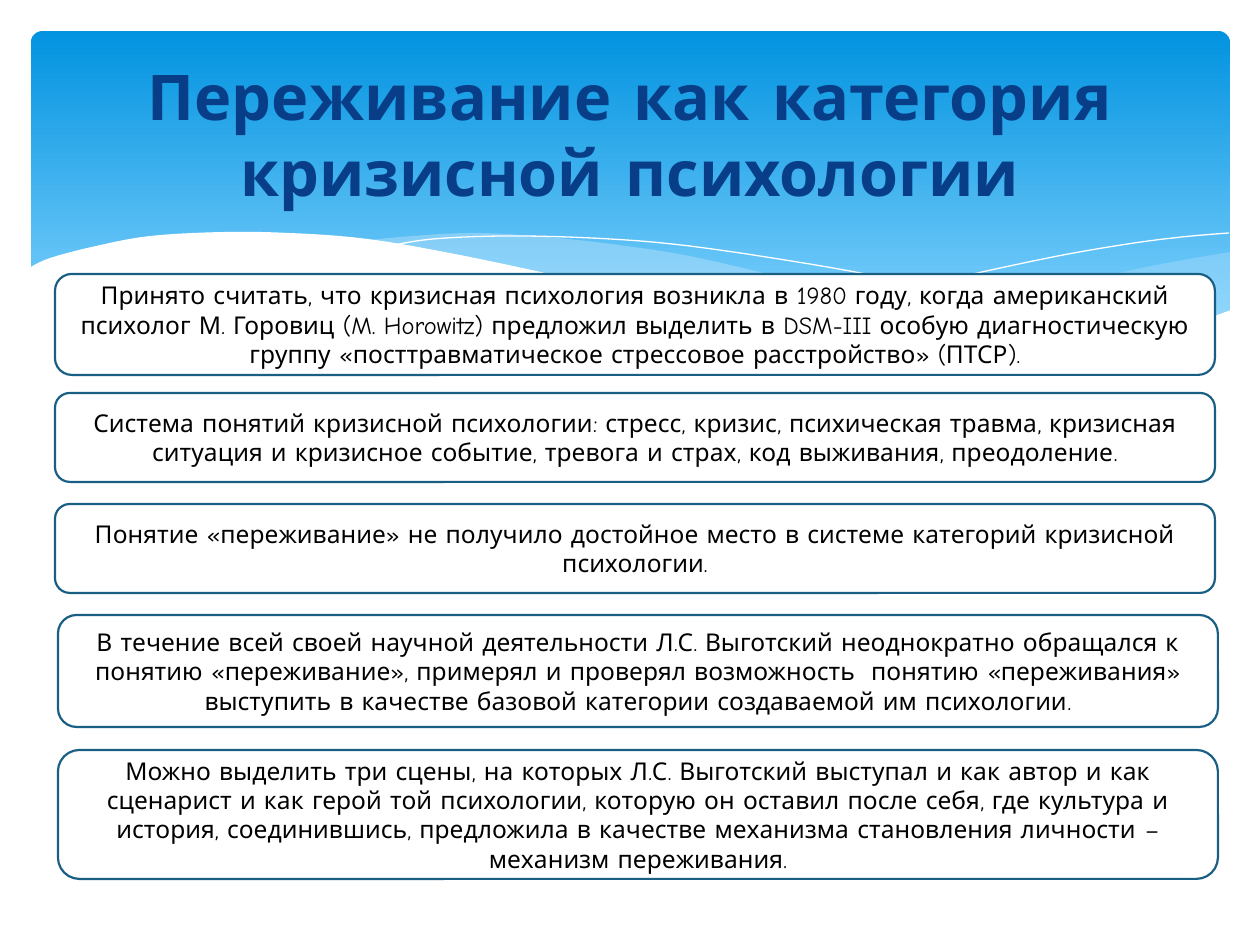
from dataclasses import dataclass
from lxml.etree import SubElement
from pptx import Presentation
from pptx.dml.color import RGBColor
from pptx.enum.shapes import MSO_SHAPE
from pptx.enum.text import MSO_ANCHOR, PP_ALIGN
from pptx.oxml.ns import qn
from pptx.util import Inches, Pt

SCALE = Inches(1) / 126


@dataclass(frozen=True)
class Theme:
    font: str = "Comic Neue"
    title: str = "073E87"
    text: str = "000000"
    white: str = "FFFFFF"
    border: str = "195F84"
    sky: str = "0293E0"
    haze: str = "83D3FE"
    wave: str = "C6E7FC"
    title_size: int = 36
    text_size: int = 14
    border_width: float = 1.25


THEME = Theme()

TITLE = "Переживание как категория кризисной психологии"

# left, top, height, text
CARDS = [
    (55, 274, 101, "Принято считать, что кризисная психология возникла в 1980 году, "
     "когда американский психолог М. Горовиц (M. Horowitz) предложил выделить в DSM-III "
     "особую диагностическую группу «посттравматическое стрессовое расстройство» (ПТСР)."),
    (55, 393, 89, "Система понятий кризисной психологии: стресс, кризис, психическая травма, "
     "кризисная ситуация и кризисное событие, тревога и страх, код выживания, преодоление."),
    (55, 504, 89, "Понятие «переживание» не получило достойное место в системе категорий "
     "кризисной психологии."),
    (58, 615, 112, "В течение всей своей научной деятельности Л.С. Выготский неоднократно "
     "обращался к понятию «переживание», примерял и проверял возможность  понятию "
     "«переживания» выступить в качестве базовой категории создаваемой им психологии."),
    (58, 750, 129, "Можно выделить три сцены, на которых Л.С. Выготский выступал и как автор "
     "и как сценарист и как герой той психологии, которую он оставил после себя, где культура "
     "и история, соединившись, предложила в качестве механизма становления личности – "
     "механизм переживания."),
]
CARD_WIDTH = 1160

RIGHT_TOP = [(1230, 252), (1178, 261), (1142, 268), (1085, 281), (982, 305),
             (919, 319), (833, 334)]
RIGHT_BASE = [(833, 334), (888, 341), (954, 348), (1026, 350), (1087, 347),
              (1140, 339), (1187, 326), (1230, 311)]
MID_TOP = [(360, 241), (413, 236), (479, 233), (557, 238), (633, 247), (699, 258),
           (793, 280), (890, 302), (977, 320), (1055, 334), (1125, 344)]
MID_BASE = [(1125, 344), (1080, 349), (1017, 350), (942, 348), (876, 340), (799, 329),
            (713, 312), (619, 292), (566, 280), (509, 266), (431, 251), (360, 241)]
LONG_LINE = [(389, 246), (433, 239), (505, 236), (591, 238), (672, 244), (766, 257),
             (876, 276), (1002, 304), (1143, 343)]
SHORT_LINE = [(772, 324), (847, 304), (942, 281), (1053, 257), (1128, 244),
              (1182, 237), (1229, 233)]
FRONT = [(1231, 310), (1172, 330), (1102, 344), (1019, 349), (937, 345), (842, 334),
         (730, 315), (634, 294), (563, 277), (460, 255), (368, 239), (290, 233),
         (223, 232), (150, 236), (96, 246), (50, 258), (29, 268)]
FRONT_FOOT = [(29, 415), (1231, 415)]


def px(value):
    return round(value * SCALE)


def rgb(code):
    return RGBColor.from_string(code)


def curve(knots, steps=5):
    """Return points of a Catmull-Rom spline through the knots."""
    ends = [knots[0], *knots, knots[-1]]
    points = [knots[0]]
    for a, b, c, d in zip(ends, ends[1:], ends[2:], ends[3:]):
        for step in range(1, steps + 1):
            t = step / steps
            points.append(tuple(
                (2 * q + (r - p) * t + (2 * p - 5 * q + 4 * r - s) * t ** 2
                 + (3 * q - p - 3 * r + s) * t ** 3) / 2
                for p, q, r, s in zip(a, b, c, d)))
    return points


def paint(shape, color, alpha=None):
    shape.fill.solid()
    shape.fill.fore_color.rgb = rgb(color)
    if alpha is not None:
        tint = shape.fill._xPr.find(f"{qn('a:solidFill')}/{qn('a:srgbClr')}")
        SubElement(tint, qn("a:alpha"), val=str(alpha * 1000))


def outline(shape, color, width):
    shape.line.color.rgb = rgb(color)
    shape.line.width = Pt(width)


def add_path(slide, points, close):
    start, *rest = [(px(x), px(y)) for x, y in points]
    pen = slide.shapes.build_freeform(*start)
    pen.add_line_segments(rest, close=close)
    shape = pen.convert_to_shape()
    shape.shadow.inherit = False
    return shape


def add_wave(slide, points, color, alpha=None):
    shape = add_path(slide, points, True)
    paint(shape, color, alpha)
    shape.line.fill.background()


def add_thread(slide, knots):
    shape = add_path(slide, curve(knots), False)
    shape.fill.background()
    outline(shape, THEME.white, 0)


def add_round(slide, *box):
    shape = slide.shapes.add_shape(MSO_SHAPE.ROUNDED_RECTANGLE, *map(px, box))
    shape.shadow.inherit = False
    return shape


def add_banner(slide):
    shape = add_round(slide, 31, 31, 1199, 340)
    shape.adjustments[0] = 0.034
    shape.line.fill.background()
    shape.fill.gradient()
    shape.fill.gradient_angle = 270
    stops = [(0, THEME.sky), (0.9, THEME.haze)]
    for stop, (place, color) in zip(shape.fill.gradient_stops, stops):
        stop.position = place
        stop.color.rgb = rgb(color)


def write(shape, text, size, color, bold=False):
    frame = shape.text_frame
    frame.word_wrap = True
    frame.vertical_anchor = MSO_ANCHOR.MIDDLE
    para = frame.paragraphs[0]
    para.alignment = PP_ALIGN.CENTER
    run = para.add_run()
    run.text = text
    style = {"name": THEME.font, "size": Pt(size), "bold": bold}
    for name, value in style.items():
        setattr(run.font, name, value)
    run.font.color.rgb = rgb(color)


def add_title(slide):
    box = slide.shapes.add_textbox(*map(px, (63, 47, 1134, 173)))
    write(box, TITLE, THEME.title_size, THEME.title, bold=True)


def add_card(slide, left, top, height, text):
    shape = add_round(slide, left, top, CARD_WIDTH, height)
    paint(shape, THEME.white)
    outline(shape, THEME.border, THEME.border_width)
    write(shape, text, THEME.text_size, THEME.text)


def main():
    deck = Presentation()
    deck.slide_width, deck.slide_height = px(1260), px(945)
    slide = deck.slides.add_slide(deck.slide_layouts[6])
    add_banner(slide)
    add_wave(slide, curve(RIGHT_TOP) + curve(RIGHT_BASE), THEME.wave, 29)
    add_wave(slide, curve(MID_TOP) + curve(MID_BASE), THEME.wave, 40)
    for knots in (LONG_LINE, SHORT_LINE):
        add_thread(slide, knots)
    add_wave(slide, curve(FRONT) + FRONT_FOOT, THEME.white)
    add_title(slide)
    for card in CARDS:
        add_card(slide, *card)
    deck.save("out.pptx")


if __name__ == "__main__":
    main()
